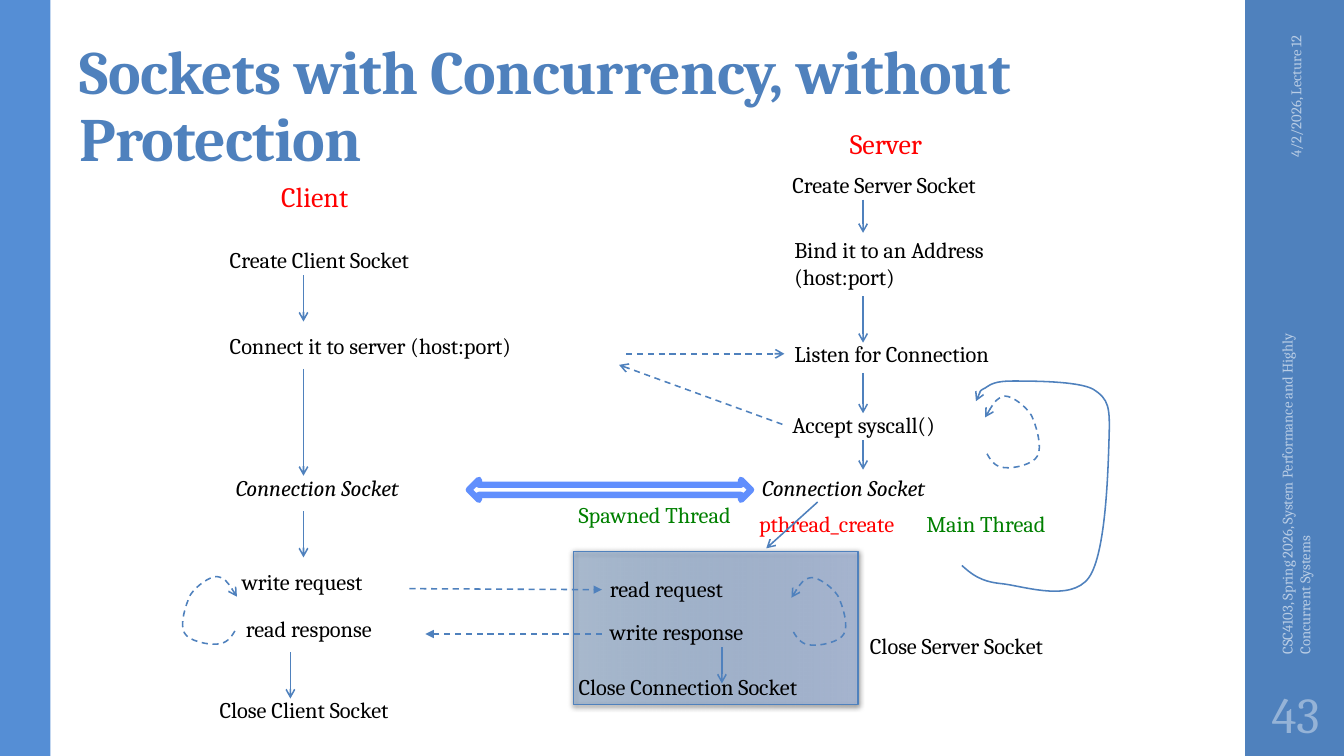
from lxml import etree
from pptx import Presentation, util as u
from pptx.dml.color import RGBColor
from pptx.enum import dml, shapes, text
from pptx.oxml import ns

BLUE, RED, GREEN, BLACK = "4F81BD", "FF0000", "008000", "000000"
PALE, MID = "B9CDE5", "95B3D7"


def color(value):
    return RGBColor.from_string(value)


def add_xml(parent, tag, **attributes):
    return etree.SubElement(parent, ns.qn(tag), attributes)


class Slide:
    font_name = "Cambria"
    line_width = 1.1

    def __init__(self, page):
        self.shapes = page.shapes

    def label(self, words, left, top, width, height=0.37, rotation=0, wrap=False,
              anchor=text.MSO_ANCHOR.TOP, align=text.PP_ALIGN.LEFT, grow=True,
              insets=(0.1, 0.05, 0.1, 0.05), spacing=None, tracking=None, **style):
        box = self.shapes.add_textbox(*map(u.Inches, (left, top, width, height)))
        box.rotation = rotation
        frame = box.text_frame
        sides = dict(zip(("left", "top", "right", "bottom"), insets))
        layout = {f"margin_{side}": u.Inches(inset) for side, inset in sides.items()}
        layout["word_wrap"] = wrap
        layout["vertical_anchor"] = anchor
        if grow:
            layout["auto_size"] = text.MSO_AUTO_SIZE.SHAPE_TO_FIT_TEXT
        for name, value in layout.items():
            setattr(frame, name, value)
        style = {"size": 16, "color": BLACK, **style}
        for index, line in enumerate(words.split("\n")):
            para = frame.add_paragraph() if index else frame.paragraphs[0]
            para.alignment = align
            para.line_spacing = spacing
            span = para.add_run()
            span.text = line
            span.font.name = self.font_name
            span.font.color.rgb = color(style["color"])
            span.font.size = u.Pt(style["size"])
            for name in ("bold", "italic"):
                setattr(span.font, name, style.get(name, False))
            if tracking:
                span.font._element.set("spc", str(tracking))

    def block(self, kind, left, top, width, height, fill=None, line=None, weight=1):
        shape = self.shapes.add_shape(kind, *map(u.Inches, (left, top, width, height)))
        shape.shadow.inherit = False
        if fill:
            shape.fill.solid()
            shape.fill.fore_color.rgb = color(fill)
        if line:
            shape.line.color.rgb = color(line)
            shape.line.width = u.Pt(weight)
        else:
            shape.line.fill.background()
        return shape

    def thread_panel(self, left, top, width, height):
        """Translucent gradient rectangle with a soft shadow."""
        panel = self.block(shapes.MSO_SHAPE.RECTANGLE, left, top, width, height,
                           line=BLUE, weight=0.75)
        panel.fill.gradient()
        panel.fill.gradient_angle = 0
        stops = ((0, "3F80CE", 26), (1, "A4C4FF", 46))
        for stop, (position, value, _) in zip(panel.fill.gradient_stops, stops):
            stop.position = position
            stop.color.rgb = color(value)
        properties = panel._element.spPr
        gradient = properties.find(ns.qn("a:gradFill"))
        for node, (_, _, alpha) in zip(gradient.iter(ns.qn("a:srgbClr")), stops):
            add_xml(node, "a:alpha", val=str(alpha * 1000))
        shadow = add_xml(properties.find(ns.qn("a:effectLst")), "a:outerShdw",
                         blurRad=str(u.Pt(4)), dist=str(u.Pt(1.2)),
                         dir="5400000", rotWithShape="0")
        add_xml(add_xml(shadow, "a:srgbClr", val=BLACK), "a:alpha", val="75000")

    def stroke(self, line, dashed, head):
        line.color.rgb = color(BLUE)
        line.width = u.Pt(self.line_width)
        if dashed:
            line.dash_style = dml.MSO_LINE.DASH
        add_xml(line._get_or_add_ln(), "a:tailEnd", type=head)

    def arrow(self, x1, y1, x2, y2, dashed=False, head="arrow"):
        connector = self.shapes.add_connector(
            shapes.MSO_CONNECTOR.STRAIGHT, *map(u.Inches, (x1, y1, x2, y2)))
        self.stroke(connector.line, dashed, head)
        add_xml(connector._element.spPr, "a:effectLst")

    def curve(self, points, height, dashed=False):
        """Chain of cubic curves; height is that of the visible line."""
        first, *rest = [tuple(map(u.Inches, point)) for point in points]
        builder = self.shapes.build_freeform(*first, scale=1.0)
        builder.add_line_segments(rest, close=False)
        outline = builder.convert_to_shape()
        route = next(outline._element.iter(ns.qn("a:path")))
        segments = route.findall(ns.qn("a:lnTo"))
        for start in range(0, len(segments), 3):
            cubic = add_xml(route, "a:cubicBezTo")
            for segment in segments[start:start + 3]:
                cubic.append(segment[0])
                route.remove(segment)
        outline.height = u.Inches(height)
        route.set("h", str(outline.height))
        outline.shadow.inherit = False
        outline.fill.background()
        self.stroke(outline.line, dashed, "arrow")

    def loop(self, x, y, direction=1, stretch=1):
        """Dashed repeat arrow; direction -1 bulges to the left."""
        self.curve([(x + direction * dx, y + stretch * dy) for dx, dy in LOOP],
                   0.67 * stretch, dashed=True)


LOOP = [(0.02, 0.54), (0.06, 0.61), (0.11, 0.67), (0.2, 0.67), (0.28, 0.68), (0.48, 0.64),
        (0.52, 0.56), (0.57, 0.48), (0.51, 0.28), (0.46, 0.18), (0.4, 0.09), (0.27, 0),
        (0.2, 0), (0.12, 0.01), (0.06, 0.1), (0, 0.2)]
ACCEPT_LOOP = [(9.54, 5.61), (9.63, 5.69), (9.72, 5.77), (9.93, 5.79), (10.14, 5.81),
               (10.62, 5.98), (10.8, 5.73), (10.97, 5.49), (10.99, 4.66), (11, 4.35),
               (11.01, 4.04), (11, 3.96), (10.84, 3.86), (10.69, 3.78), (10.23, 3.78),
               (10.05, 3.78), (9.87, 3.78), (9.83, 3.81), (9.77, 3.85), (9.71, 3.88),
               (9.7, 3.93), (9.68, 3.98)]
STEPS = [("Create Client Socket", 2.18, 2.39, 2.35),
         ("Connect it to server (host:port)", 2.18, 3.25, 3.39),
         ("write request", 2.3, 5.59, 1.59),
         ("read response", 2.34, 6.05, 1.64),
         ("Close Client Socket", 2.08, 6.86, 2.21),
         ("Create Server Socket", 7.76, 1.65, 2.4),
         ("Bind it to an Address\n(host:port)", 7.78, 2.29, 2.46, 0.64),
         ("Listen for Connection", 7.78, 3.33, 2.44),
         ("Accept syscall()", 7.76, 4.03, 1.8),
         ("read request", 5.95, 5.66, 1.51),
         ("write response", 5.95, 6.08, 1.72),
         ("Close Server Socket", 8.53, 6.22, 2.26)]
DOWN_ARROWS = {3.01: [(2.73, 3.19), (3.66, 4.72), (5.07, 5.53)],
               2.88: [(6.47, 6.93)],
               8.56: [(1.98, 2.31), (2.94, 3.4), (3.7, 4.1), (4.37, 4.66)],
               7.16: [(6.42, 6.78)]}


def main():
    deck = Presentation()
    deck.slide_width, deck.slide_height = u.Inches(13.33), u.Inches(7.5)
    slide = Slide(deck.slides.add_slide(deck.slide_layouts[6]))
    middle = text.MSO_ANCHOR.MIDDLE

    slide.block(shapes.MSO_SHAPE.RECTANGLE, 12.35, 0, 1, 7.5, BLUE)
    slide.block(shapes.MSO_SHAPE.RECTANGLE, 0, 0, 0.5, 7.5, "558ED5")
    slide.label("Sockets with Concurrency, without Protection", 0.69, 0.25, 11.41, 1.53,
                wrap=True, grow=False, anchor=text.MSO_ANCHOR.BOTTOM, spacing=0.9,
                insets=(0.1, 0.03, 0.1, 0.05), tracking=-50, size=44, color=BLUE, bold=True)
    margin = {"wrap": True, "grow": False, "anchor": middle}
    slide.label("4/2/2026, Lecture 12", 11.81, 1.09, 2.08, 0.4, rotation=270,
                align=text.PP_ALIGN.RIGHT, size=10.5, color=PALE, **margin)
    slide.label("CSC4103, Spring 2026, System Performance and Highly Concurrent Systems",
                10.89, 4.43, 3.92, 0.4, rotation=270, size=10.5, color=PALE, **margin)
    slide.label("43", 12.35, 6.75, 1, 0.65, align=text.PP_ALIGN.CENTER,
                insets=(0.05,) * 4, size=36, color=MID, **margin)

    slide.thread_panel(5.69, 5.47, 2.82, 1.52)
    slide.label("Client", 2.69, 1.73, 1, 0.44, size=20, color=RED)
    slide.label("Server", 8.33, 1.21, 1.06, 0.44, size=20, color=RED)
    for step in STEPS:
        slide.label(*step)
    slide.label("Close Connection Socket", 5.64, 6.63, 3.06, wrap=True)
    for left in (2.24, 7.46):
        slide.label("Connection Socket", left, 4.65, 2.12, italic=True)
    slide.label("Spawned Thread", 5.64, 4.92, 1.97, color=GREEN)
    slide.label("Main Thread", 9.09, 5.01, 1.56, color=GREEN)
    slide.label("pthread_create", 7.43, 5.01, 2.41, wrap=True, color=RED)

    for x, spans in DOWN_ARROWS.items():
        for top, bottom in spans:
            slide.arrow(x, top, x, bottom)
    slide.arrow(8.11, 4.98, 7.6, 5.44)
    slide.arrow(6.21, 3.51, 7.78, 3.51, dashed=True)
    slide.arrow(7.76, 4.21, 6.14, 3.62, dashed=True)
    slide.arrow(4.06, 5.84, 5.97, 5.85, dashed=True, head="triangle")
    slide.arrow(5.97, 6.29, 4.22, 6.29, dashed=True, head="triangle")
    slide.block(shapes.MSO_SHAPE.LEFT_RIGHT_ARROW, 4.65, 4.76, 2.8, 0.2,
                "FFFFFF", "618FFD", 4.5)
    slide.curve(ACCEPT_LOOP, 2.09)
    slide.loop(9.77, 3.93, stretch=1.06)
    slide.loop(7.85, 5.73)
    slide.loop(2.35, 5.72, direction=-1)
    deck.save("out.pptx")


if __name__ == "__main__":
    main()
